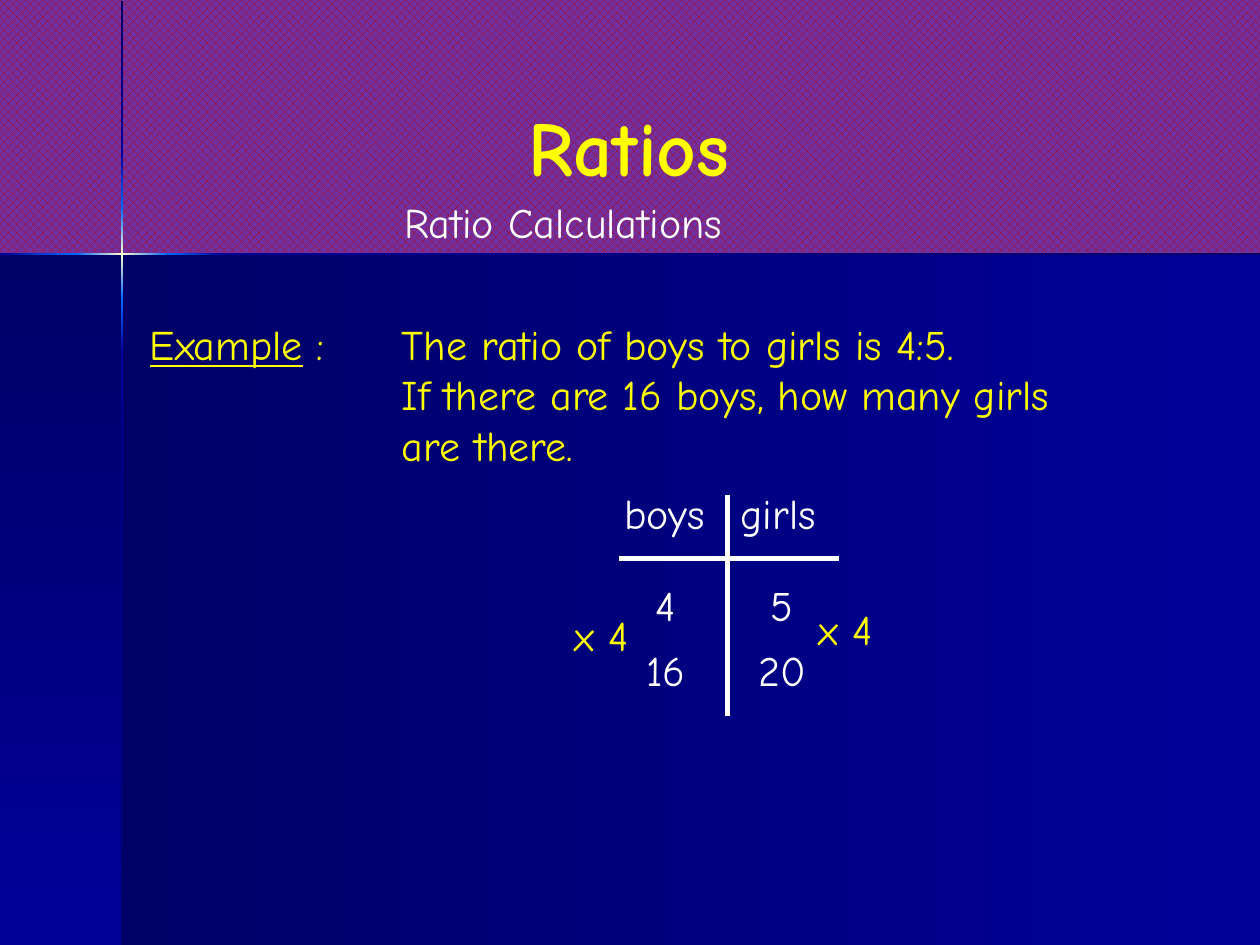
"""Build a slide that solves a ratio example with a two-column working table."""
from copy import deepcopy
from itertools import pairwise

from lxml import etree
from pptx import Presentation
from pptx import util as u
from pptx.dml.color import RGBColor
from pptx.enum import dml, shapes, text
from pptx.oxml.ns import qn

NAVY = RGBColor(0x00, 0x00, 0x66)
BLUE = RGBColor(0x00, 0x00, 0x99)
GLOW = RGBColor(0x00, 0x66, 0xFF)
CREAM = RGBColor(0xFF, 0xFF, 0xCC)
RED = RGBColor(0xC0, 0x00, 0x00)
PURPLE = RGBColor(0x70, 0x30, 0xA0)
YELLOW = RGBColor(0xFF, 0xFF, 0x00)
WHITE = RGBColor(0xFF, 0xFF, 0xFF)

BEAM_COLORS = [(BLUE, GLOW), (GLOW, CREAM, GLOW), (GLOW, BLUE), (BLUE, NAVY)]


class SlideBuilder:
    def __init__(self, slide, font="Comic Neue", size=24, beam_width=1.2):
        self.slide = slide
        self.font = font
        self.size = size
        self.beam_width = beam_width

    def background(self, foreground, background):
        fill = self.slide.background.fill
        fill.patterned()
        fill.pattern = dml.MSO_PATTERN.PERCENT_50
        fill.fore_color.rgb = foreground
        fill.back_color.rgb = background

    def gradient(self, left, top, width, height, colors, downward=False):
        shape = self.slide.shapes.add_shape(
            shapes.MSO_SHAPE.RECTANGLE, u.Pt(left), u.Pt(top), u.Pt(width), u.Pt(height))
        shape.shadow.inherit = False
        shape.line.fill.background()
        shape.fill.gradient()
        shape.fill.gradient_angle = 270 if downward else 0
        stop_list = next(shape._element.spPr.iter(qn("a:gsLst")))
        for _ in colors[2:]:
            stop_list.append(deepcopy(stop_list[0]))
        for index, (stop, color) in enumerate(zip(shape.fill.gradient_stops, colors)):
            stop.color.rgb = color
            stop.position = index / (len(colors) - 1)

    def beam(self, offset, breaks, color_sets, downward=False):
        for (start, end), colors in zip(pairwise(breaks), color_sets):
            length = end - start
            box = ((offset, start, self.beam_width, length) if downward
                   else (start, offset, length, self.beam_width))
            self.gradient(*box, colors, downward)

    def line(self, start_x, start_y, end_x, end_y):
        connector = self.slide.shapes.add_connector(
            shapes.MSO_CONNECTOR.STRAIGHT,
            u.Pt(start_x), u.Pt(start_y), u.Pt(end_x), u.Pt(end_y))
        connector.line.color.rgb = WHITE
        connector.line.width = u.Pt(3)
        etree.SubElement(connector._element.spPr, qn("a:effectLst"))

    def run(self, paragraph, words, color, size=None, bold=False, underline=False):
        run = paragraph.add_run()
        run.text = words
        run.font.name = self.font
        run.font.size = u.Pt(size or self.size)
        run.font.color.rgb = color
        run.font.bold = bold
        run.font.underline = underline

    def frame(self, left, top, width, height):
        box = self.slide.shapes.add_textbox(u.Pt(left), u.Pt(top), u.Pt(width), u.Pt(height))
        return box.text_frame

    def label(self, left, top, width, words, color=WHITE):
        frame = self.frame(left, top, width, 36.4)
        frame.word_wrap = False
        frame.auto_size = text.MSO_AUTO_SIZE.SHAPE_TO_FIT_TEXT
        self.run(frame.paragraphs[0], words, color)

    def title(self, left, top, width, height, words):
        frame = self.frame(left, top, width, height)
        frame.word_wrap = True
        frame.vertical_anchor = text.MSO_ANCHOR.BOTTOM
        frame.paragraphs[0].alignment = text.PP_ALIGN.CENTER
        self.run(frame.paragraphs[0], words, YELLOW, size=44, bold=True)

    def tab_stops(self, paragraph, *positions):
        tab_list = etree.SubElement(paragraph._p.get_or_add_pPr(), qn("a:tabLst"))
        for position in positions:
            etree.SubElement(tab_list, qn("a:tab"), pos=str(u.Pt(position)), algn="l")

    def example(self, left, top, width, height, heading, lines):
        frame = self.frame(left, top, width, height)
        frame.word_wrap = False
        frame.auto_size = text.MSO_AUTO_SIZE.SHAPE_TO_FIT_TEXT
        paragraph = frame.paragraphs[0]
        self.tab_stops(paragraph, 72, 144)
        self.run(paragraph, heading, YELLOW, underline=True)
        self.run(paragraph, " : \t" + lines[0], YELLOW)
        for words in lines[1:]:
            paragraph = frame.add_paragraph()
            self.tab_stops(paragraph, 72, 144)
            self.run(paragraph, "\t\t" + words, YELLOW)


def main():
    presentation = Presentation()
    presentation.slide_width = u.Pt(720)
    presentation.slide_height = u.Pt(540)
    builder = SlideBuilder(presentation.slides.add_slide(presentation.slide_layouts[6]))

    builder.background(RED, PURPLE)
    builder.gradient(69.8, 145, 650.2, 395, (NAVY, BLUE))
    builder.gradient(0, 145, 69.8, 395, (NAVY, BLUE), downward=True)
    builder.beam(69.2, (0.7, 87.1, 118.8, 171.4, 203, 540),
                 [(NAVY, BLUE), *BEAM_COLORS], downward=True)
    builder.beam(144.6, (0, 43.5, 95.8, 127.4, 720), BEAM_COLORS)

    builder.title(152.6, 58.3, 414, 54.7, "Ratios")
    builder.label(223.9, 108.7, 211.7, "Ratio Calculations")
    builder.example(78.5, 178.5, 571.7, 93.6, "Example", [
        "The ratio of boys to girls is 4:5.",
        "If there are 16 boys, how many girls",
        "are there."])

    builder.line(415.7, 283, 415.7, 409)
    builder.line(479.5, 319, 353.5, 319)
    for left, top, width, words in [
            (349.5, 275.3, 65.5, "boys"), (416.2, 275, 64.1, "girls"),
            (367.5, 327.6, 28.8, "4"), (433.4, 327.6, 28.8, "5"),
            (362.2, 365, 39.6, "16"), (426.2, 365, 43.9, "20")]:
        builder.label(left, top, width, words)
    for left, top in [(321.1, 344.9), (460.8, 341.3)]:
        builder.label(left, top, 50.4, "x 4", YELLOW)

    presentation.save("out.pptx")


if __name__ == "__main__":
    main()
